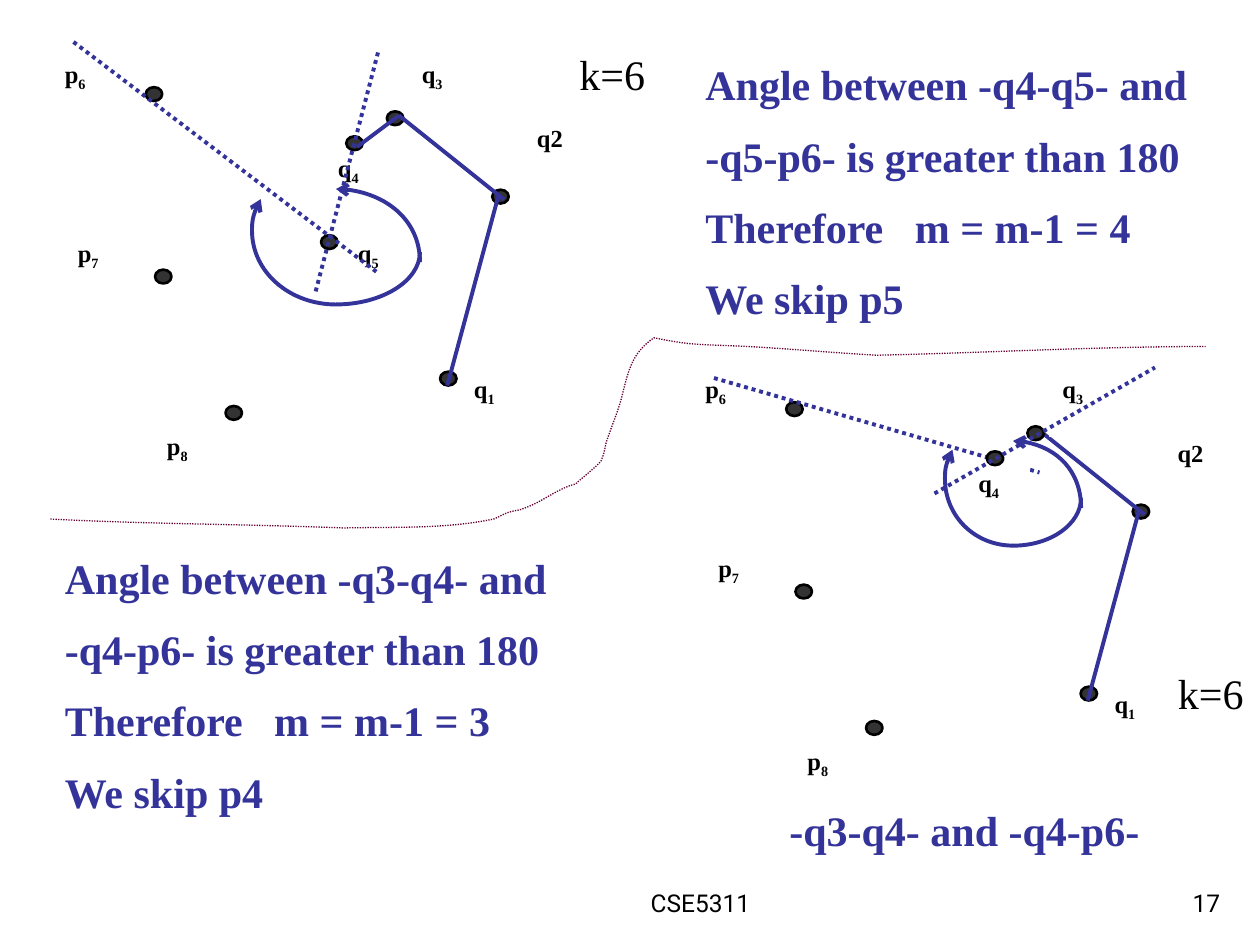
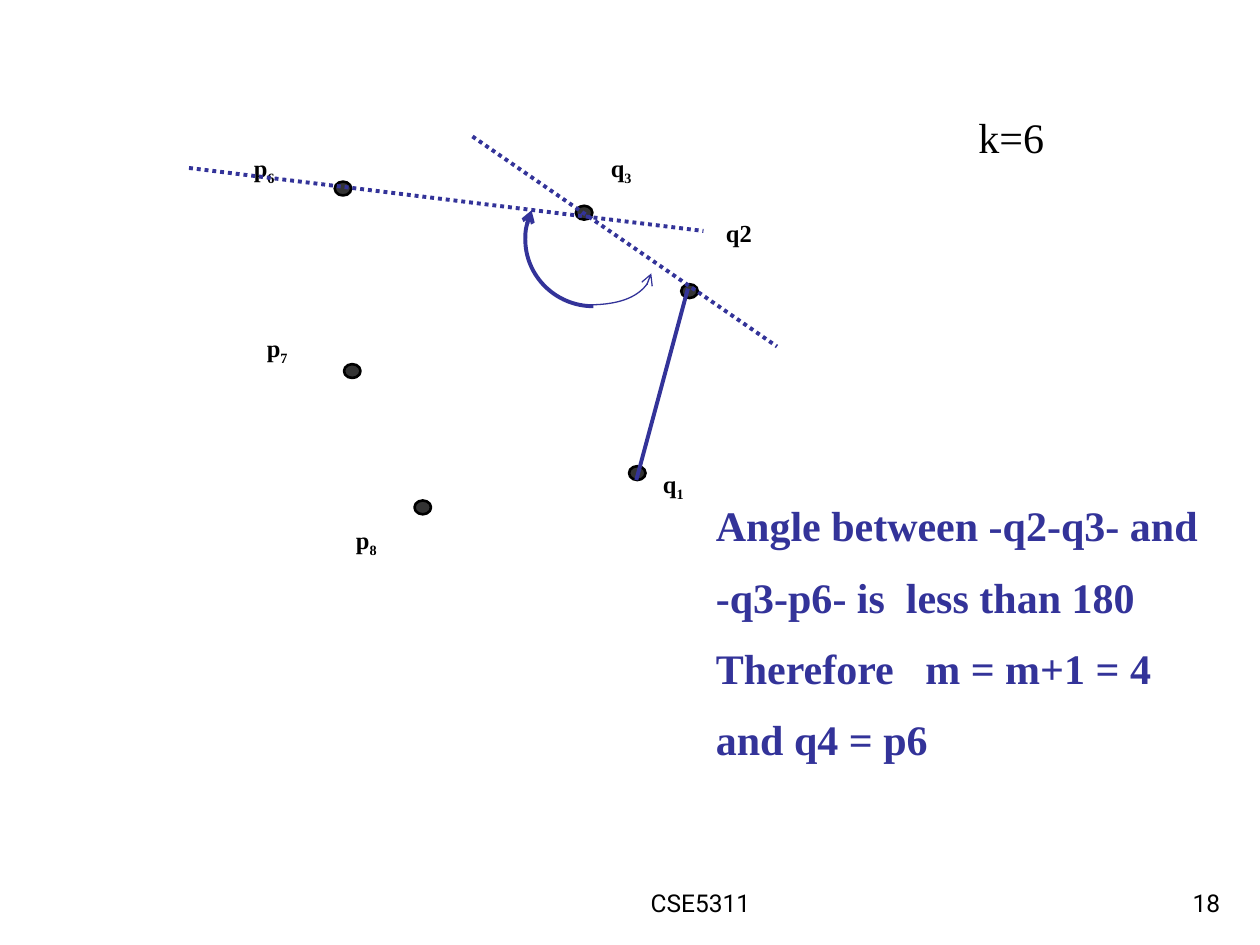
"""Two slides on skipping hull points by comparing turning angles."""
from dataclasses import dataclass
from typing import NamedTuple

from lxml import etree
from pptx import Presentation
from pptx.dml.color import RGBColor
from pptx.enum.dml import MSO_LINE
from pptx.enum.shapes import MSO_CONNECTOR, MSO_SHAPE
from pptx.enum.text import MSO_ANCHOR, PP_ALIGN
from pptx.oxml.ns import qn
from pptx.util import Pt

DOTTED = MSO_LINE.ROUND_DOT
STRAIGHT = MSO_CONNECTOR.STRAIGHT
RECT, OVAL = MSO_SHAPE.RECTANGLE, MSO_SHAPE.OVAL
LEFT, CENTER, RIGHT = PP_ALIGN.LEFT, PP_ALIGN.CENTER, PP_ALIGN.RIGHT
TOP, BOTTOM = MSO_ANCHOR.TOP, MSO_ANCHOR.BOTTOM
BLANK_LAYOUT = 6

Point = tuple[float, float]


@dataclass(frozen=True)
class Theme:
    """Colours, fonts and type sizes of both slides."""
    ink: RGBColor = RGBColor(0x00, 0x00, 0x00)
    paper: RGBColor = RGBColor(0xFF, 0xFF, 0xFF)
    accent: RGBColor = RGBColor(0x33, 0x33, 0x99)
    dot: RGBColor = RGBColor(0x33, 0x33, 0x33)
    divider: RGBColor = RGBColor(0x66, 0x00, 0x33)
    serif: str = "Times New Roman"
    sans: str = "Roboto"
    body: float = 24
    small: float = 14
    gap: float = 12
    thick: float = 2.25
    thin: float = 0.75
    outline: float = 1.5


class Box(NamedTuple):
    """A frame in points."""
    x: float
    y: float
    w: float
    h: float

    def emu(self) -> list[int]:
        """Give the frame as lengths."""
        return [Pt(v) for v in self]


class Mark(NamedTuple):
    """A named point: its dot, its label and the label text."""
    dot: Point
    label: Point
    text: str
    sub: str = ""


class Curve(NamedTuple):
    """A chain of cubic curves with an optional arrowhead."""
    points: list[Point]
    arrow: str = ""
    width: float = 2.25


T = Theme()
DOT_SIZE = (9.4, 7.9)
LABEL_SIZE = (36, 39.6)
BODY = dict(name=T.serif, size=Pt(T.body), bold=True)
PLAIN = dict(name=T.serif, size=Pt(T.body), bold=False)
LABEL = dict(name=T.serif, size=Pt(T.small), bold=True)
FOOTER = dict(name=T.sans, size=Pt(T.small), bold=False)

MARKS = {
    "p6": Mark((83.3, 49.8), (30, 30), "p", "6"),
    "p7": Mark((88.6, 154.1), (37.4, 132.5), "p", "7"),
    "p8": Mark((128.9, 232), (88.3, 242.6), "p", "8"),
    "q1": Mark((251.5, 212.4), (263.8, 210.2), "q", "1"),
    "q2": Mark((281.3, 108.4), (299.8, 66.8), "q2"),
    "q3": Mark((221.1, 63.6), (234, 30), "q", "3"),
    "q4": Mark((197.9, 77.9), (186, 84), "q", "4"),
    "q5": Mark((183.5, 134.4), (197.5, 132.5), "q", "5"),
}
EDGES = [
    ((255.6, 220.3), (285.1, 110.9)),
    ((288, 114), (228, 66)),
    ((204, 84), (228, 66)),
]
DIVIDER = Curve([
    (28.8, 296.6), (84.2, 299.5), (140.4, 299.5), (196.6, 301.7),
    (226.1, 301), (254.2, 302.4), (282.2, 296.6),
    (285.8, 295.2), (288.7, 293), (292.3, 292.3),
    (294.5, 291.6), (297.4, 291.6), (300.2, 290.2),
    (310.3, 286.6), (318.2, 279.4), (329, 276.5),
    (331.2, 274.3), (341.3, 266.4), (343.4, 263.5),
    (344.9, 260.6), (345.6, 257), (346.3, 253.4),
    (349.2, 244.1), (353.5, 234.7), (355.7, 225.4),
    (359.3, 211), (361.4, 201.6), (373.7, 193),
    (395.3, 197.3), (395.3, 196.6), (427.7, 198),
    (452.2, 199.4), (476.6, 201.6), (501.1, 203),
    (563, 201.6), (627.1, 198), (689, 198)], width=T.thin)
UPPER_TURN = [
    Curve([(192, 108), (218.2, 108), (240, 126.7), (240, 149.8)], "headEnd"),
    Curve([(192, 174), (165.6, 174), (144, 155.5), (144, 131.8),
           (144, 126), (145.4, 119.5), (149, 113.8)], "tailEnd"),
    Curve([(192, 174), (218.2, 174), (240, 160.6), (240, 144)]),
]
LOWER_TURN = [
    Curve([(578.9, 252), (600.5, 252), (617.8, 269.3), (617.8, 290.2)], "headEnd"),
    Curve([(578.9, 311.8), (557.3, 311.8), (540, 295.2), (540, 273.6),
           (540, 267.8), (541.4, 262.1), (544.3, 257)], "tailEnd"),
    Curve([(578.9, 311.8), (600.5, 311.8), (617.8, 299.5), (617.8, 284.4)]),
]
LAST_TURN = [
    Curve([(339.1, 175), (317.5, 175), (300.2, 157.7), (300.2, 136.8),
           (300.2, 131), (301.7, 125.3), (303.8, 120.2)], "tailEnd"),
    Curve([(336.2, 174.2), (355.7, 174.2), (372.2, 165.6), (372.2, 156.2)],
          "tailEnd", T.thin),
]


def add_run(p, text: str, fmt: dict, color: RGBColor):
    """Append a formatted run to a paragraph."""
    r = p.add_run()
    r.text = text
    for key, value in fmt.items():
        setattr(r.font, key, value)
    r.font.color.rgb = color
    return r


def set_line(line, color: RGBColor, width: float, dash=None) -> None:
    """Set colour, width and dash of a line."""
    line.color.rgb = color
    line.width = Pt(width)
    if dash is not None:
        line.dash_style = dash


def add_text(slide, box: Box, lines: list[str], fmt: dict, color: RGBColor,
             align=LEFT, anchor=TOP) -> None:
    """Add a text box with one paragraph a line."""
    tf = slide.shapes.add_textbox(*box.emu()).text_frame
    tf.word_wrap = True
    tf.vertical_anchor = anchor
    for i, text in enumerate(lines):
        p = tf.add_paragraph() if i else tf.paragraphs[0]
        p.alignment = align
        if i:
            p.space_before = Pt(T.gap)
        add_run(p, text, fmt, color)


def add_preset(parent, kind, box: Box, fill: RGBColor, edge: RGBColor, width: float):
    """Add a flat preset shape."""
    sp = parent.shapes.add_shape(kind, *box.emu())
    sp.shadow.inherit = False
    sp.fill.solid()
    sp.fill.fore_color.rgb = fill
    set_line(sp.line, edge, width)
    return sp


def add_marks(parent, origin: Point, names: str) -> None:
    """Draw the label and the dot of each named point."""
    dx, dy = origin
    for mark in (MARKS[name] for name in names.split()):
        x, y = mark.label
        sp = add_preset(parent, RECT, Box(x + dx, y + dy, *LABEL_SIZE),
                        T.paper, T.paper, T.thin)
        tf = sp.text_frame
        tf.vertical_anchor = TOP
        p = tf.paragraphs[0]
        p.alignment = LEFT
        add_run(p, mark.text, LABEL, T.ink)
        if mark.sub:
            r = add_run(p, mark.sub, LABEL, T.ink)
            r.font._element.set("baseline", "-25000")
        x, y = mark.dot
        add_preset(parent, OVAL, Box(x + dx, y + dy, *DOT_SIZE),
                   T.dot, T.ink, T.outline)


def add_segment(slide, start: Point, end: Point, dash=None) -> None:
    """Draw a straight line."""
    sp = slide.shapes.add_connector(STRAIGHT, *(Pt(v) for v in start + end))
    set_line(sp.line, T.accent, T.thick, dash)
    etree.SubElement(sp._element.spPr, qn("a:effectLst"))


def add_edges(slide, origin: Point, count: int) -> None:
    """Draw the first hull edges."""
    dx, dy = origin
    for (x1, y1), (x2, y2) in EDGES[:count]:
        add_segment(slide, (x1 + dx, y1 + dy), (x2 + dx, y2 + dy))


def bend(sp) -> None:
    """Turn each three straight segments into one cubic curve."""
    outline = next(sp._element.iter(qn("a:path")))
    segments = outline.findall(qn("a:lnTo"))
    for i in range(0, len(segments), 3):
        cubic = etree.SubElement(outline, qn("a:cubicBezTo"))
        for segment in segments[i:i + 3]:
            cubic.append(segment[0])
            outline.remove(segment)


def add_curve(parent, curve: Curve, color: RGBColor = T.accent, dash=None) -> None:
    """Draw an open curve."""
    start, *rest = [(Pt(x), Pt(y)) for x, y in curve.points]
    builder = parent.shapes.build_freeform(*start)
    builder.add_line_segments(rest, close=False)
    sp = builder.convert_to_shape()
    bend(sp)
    sp.shadow.inherit = False
    sp.fill.background()
    set_line(sp.line, color, curve.width, dash)
    if curve.arrow:
        ln = sp._element.spPr.find(qn("a:ln"))
        etree.SubElement(ln, qn(f"a:{curve.arrow}"), type="arrow")


def add_turn(parent, curves: list[Curve]) -> None:
    """Draw the arcs that show one angle."""
    for curve in curves:
        add_curve(parent, curve)


def new_slide(prs, number: int):
    """Add a blank slide with its footer."""
    slide = prs.slides.add_slide(prs.slide_layouts[BLANK_LAYOUT])
    add_text(slide, Box(288, 492, 228, 36), ["CSE5311 "], FOOTER, T.ink, CENTER, BOTTOM)
    add_text(slide, Box(554.4, 492, 150, 36), [str(number)], FOOTER, T.ink, RIGHT, BOTTOM)
    return slide


def add_k(slide, x: float, y: float) -> None:
    """Add the current step."""
    add_text(slide, Box(x, y, 54, 36), ["k=6"], PLAIN, T.ink)


def build_skips(prs) -> None:
    """Build the slide where two points are skipped."""
    slide = new_slide(prs, 17)
    add_text(slide, Box(396, 30, 324, 165.6),
             ["Angle between -q4-q5- and", "-q5-p6- is greater than 180",
              "Therefore   m = m-1 = 4", "We skip p5"], BODY, T.accent)
    add_text(slide, Box(30, 312, 366, 208.8),
             ["Angle between -q3-q4- and", "-q4-p6- is greater than 180",
              "Therefore   m = m-1 = 3", "We skip p4"], BODY, T.accent)
    add_curve(slide, DIVIDER, T.divider, DOTTED)

    upper = (0, 0)
    add_marks(slide, upper, "q4 p6 p7 p8 q1 q2 q3 q5")
    add_edges(slide, upper, 3)
    add_segment(slide, (216, 30), (180, 168), DOTTED)
    add_segment(slide, (42, 24), (216, 156), DOTTED)
    add_turn(slide, UPPER_TURN)
    add_k(slide, 324, 24)

    lower = (366, 180)
    add_text(slide, Box(444, 456, 222, 36), ["-q3-q4- and -q4-p6-"], BODY, T.accent)
    add_marks(slide, lower, "p6 p7 p8 q1 q2")
    add_edges(slide, lower, 2)
    add_segment(slide, (408, 216), (594, 270), DOTTED)
    turn = slide.shapes.add_group_shape()
    add_marks(turn, lower, "q4 q3")
    add_turn(turn, LOWER_TURN)
    add_segment(slide, (534, 282), (660, 210), DOTTED)
    add_k(slide, 666, 378)


def build_advance(prs) -> None:
    """Build the slide where the next point is accepted."""
    slide = new_slide(prs, 18)
    origin = (108, 54)
    add_marks(slide, origin, "p6 p7 p8 q1 q2 q3")
    add_edges(slide, origin, 1)
    add_segment(slide, (108, 96), (402, 132), DOTTED)
    add_segment(slide, (270, 78), (444, 198), DOTTED)
    add_turn(slide, LAST_TURN)
    add_text(slide, Box(402, 282, 296, 208.8),
             ["Angle between -q2-q3- and", "-q3-p6- is  less than 180",
              "Therefore   m = m+1 = 4", "and q4 = p6"], BODY, T.accent)
    add_k(slide, 552, 60)


def main() -> None:
    """Build and save the presentation."""
    prs = Presentation()
    prs.slide_width, prs.slide_height = Pt(720), Pt(540)
    build_skips(prs)
    build_advance(prs)
    prs.save("out.pptx")


if __name__ == "__main__":
    main()
